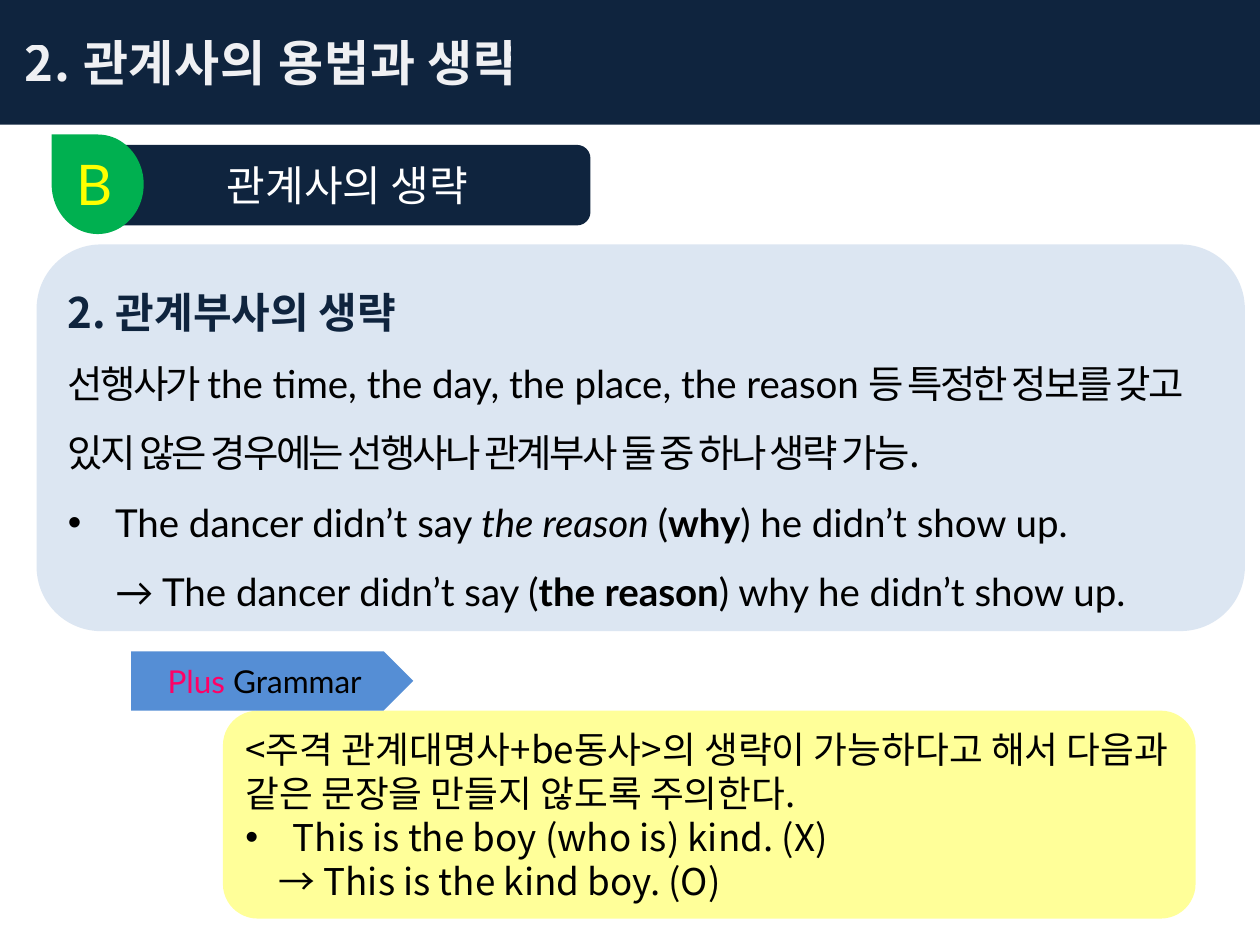
from lxml.etree import SubElement
from pptx import Presentation
from pptx.dml.color import RGBColor
from pptx.enum.shapes import MSO_SHAPE
from pptx.enum.text import MSO_ANCHOR, PP_ALIGN
from pptx.oxml.ns import qn
from pptx.util import Pt

COLORS = {
    "navy": "0F243E", "pale": "DCE6F2", "green": "00B050", "cream": "FFFF99",
    "blue": "558ED5", "black": "000000", "white": "FFFFFF", "yellow": "FFFF00",
    "pink": "FF0066", "title": "FCFCFD", "outline": "101A26",
}
KOREAN = "Noto Sans CJK KR"
LATIN = "Lato"


def add_panel(page, kind, left, top, width, height, fill):
    panel = page.shapes.add_shape(kind, Pt(left), Pt(top), Pt(width), Pt(height))
    panel.shadow.inherit = False
    panel.fill.solid()
    panel.fill.fore_color.rgb = RGBColor.from_string(COLORS[fill])
    panel.line.fill.background()
    panel.text_frame.word_wrap = True
    panel.text_frame.vertical_anchor = MSO_ANCHOR.MIDDLE
    return panel


def add_span(para, text, size, font=KOREAN, color="black", bold=False, italic=False, spacing=0):
    span = para.add_run()
    span.text = text
    span.font.size = Pt(size)
    span.font.bold = bold
    span.font.italic = italic
    span.font.name = font
    span.font.color.rgb = RGBColor.from_string(COLORS[color])
    properties = span.font._element
    SubElement(properties, qn("a:ea")).set("typeface", font)
    if spacing:
        properties.set("spc", str(int(spacing * 100)))
    return span


def add_para(frame, first=False, align=PP_ALIGN.LEFT, spacing=None, margin=0, bullet=False):
    para = frame.paragraphs[0] if first else frame.add_paragraph()
    para.alignment = align
    if spacing:
        para.line_spacing = spacing
    properties = para._p.get_or_add_pPr()
    if margin:
        properties.set("marL", str(Pt(margin)))
    if bullet:
        properties.set("indent", str(-Pt(margin)))
        SubElement(properties, qn("a:buFont")).set("typeface", "Arial")
        SubElement(properties, qn("a:buChar")).set("char", "•")
    return para


def set_alpha(fill, percent):
    SubElement(fill[0], qn("a:alpha")).set("val", str(percent * 1000))


def add_header(page, left, top, width, height):
    frame = add_panel(page, MSO_SHAPE.RECTANGLE, left, top, width, height, "navy").text_frame
    para = add_para(frame, first=True, margin=7)
    span = add_span(para, "2. 관계사의 용법과 생략", 28, color="title", bold=True, spacing=0.5)
    properties = span.font._element
    set_alpha(properties.find(qn("a:solidFill")), 95)
    outline = SubElement(properties, qn("a:ln"))
    outline.set("w", str(Pt(1.06)))
    fill = SubElement(outline, qn("a:solidFill"))
    SubElement(fill, qn("a:srgbClr")).set("val", COLORS["outline"])
    set_alpha(fill, 6)
    properties.insert(0, outline)


def add_lesson(page, left, top, width, height):
    frame = add_panel(page, MSO_SHAPE.FLOWCHART_ALTERNATE_PROCESS,
                      left, top, width, height, "pale").text_frame
    para = add_para(frame, first=True, spacing=1.5)
    add_span(para, "2. 관계부사의 생략", 24, color="navy", bold=True)

    para = add_para(frame, spacing=1.5)
    add_span(para, "선행사가 ", 22, spacing=-1.5)
    add_span(para, "the time, the day, the place, the reason ", 22, LATIN)
    add_span(para, "등 특정한 정보를 갖고 있지 않은 경우에는 선행사나 관계부사 둘 중 하나 생략 가능.",
             22, spacing=-1.5)

    para = add_para(frame, spacing=1.5, margin=27, bullet=True)
    add_span(para, "The dancer didn’t say ", 22, LATIN)
    add_span(para, "the reason ", 22, LATIN, italic=True)
    add_span(para, "(", 22, LATIN)
    add_span(para, "why", 22, LATIN, bold=True)
    add_span(para, ") he didn’t show up.", 22, LATIN)

    para = add_para(frame, spacing=1.5, margin=27)
    add_span(para, "→ The dancer didn’t say (", 22, LATIN)
    add_span(para, "the reason", 22, LATIN, bold=True)
    add_span(para, ") why he didn’t show up.", 22, LATIN)


def add_section(page, left, top, width, height):
    bar = add_panel(page, MSO_SHAPE.FLOWCHART_ALTERNATE_PROCESS,
                    left + 32.4, top + 6, width - 32.4, 46, "navy")
    para = add_para(bar.text_frame, first=True, align=PP_ALIGN.CENTER)
    add_span(para, "관계사의 생략", 24, color="white")

    drop = add_panel(page, MSO_SHAPE.TEAR, left, top + 2.2, height, 52.6, "green")
    drop.rotation = 270

    letter = page.shapes.add_textbox(Pt(left + 9.3), Pt(top + 5.3), Pt(34), Pt(46))
    add_span(add_para(letter.text_frame, first=True), "B", 32, LATIN, "yellow")


def add_note(page, left, top, width, height):
    frame = add_panel(page, MSO_SHAPE.FLOWCHART_ALTERNATE_PROCESS,
                      left, top, width, height, "cream").text_frame
    para = add_para(frame, first=True)
    add_span(para, "<주격 관계대명사+be동사>의 생략이 가능하다고 해서 "
                   "다음과 같은 문장을 만들지 않도록 주의한다.", 21)
    para = add_para(frame, margin=27, bullet=True)
    add_span(para, "This is the boy (who is) kind. (X)", 21)
    para = add_para(frame, margin=19)
    add_span(para, "→ This is the kind boy. (O)", 21)


def add_tag(page, left, top, width, height):
    tag = add_panel(page, MSO_SHAPE.PENTAGON, left, top, width, height, "blue")
    para = add_para(tag.text_frame, first=True, align=PP_ALIGN.CENTER)
    add_span(para, "Plus ", 18, LATIN, "pink")
    add_span(para, "Grammar", 18, LATIN)


def main():
    deck = Presentation()
    deck.slide_width = Pt(720)
    deck.slide_height = Pt(540)
    page = deck.slides.add_slide(deck.slide_layouts[6])
    add_header(page, 0, 0, 720, 71.3)
    add_lesson(page, 20.9, 139.7, 690.5, 221)
    add_section(page, 27.4, 76.8, 310, 56.9)
    add_note(page, 127.4, 406.1, 555.8, 118.8)
    add_tag(page, 74.9, 372.2, 161.3, 33.9)
    deck.save("out.pptx")


if __name__ == "__main__":
    main()
